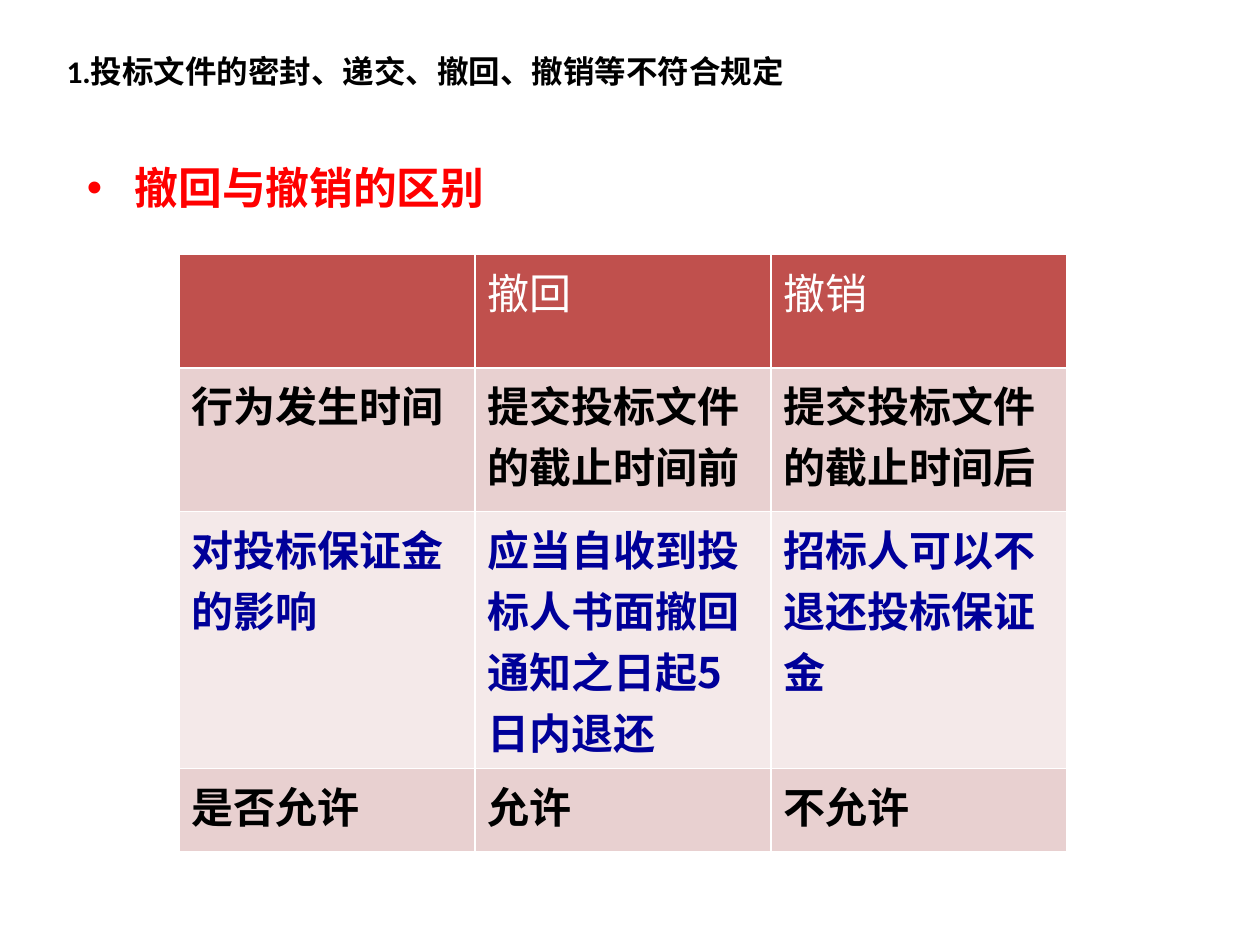
from lxml import etree
from pptx import Presentation
from pptx.dml.color import RGBColor
from pptx.oxml import ns
from pptx.util import Inches, Pt

BLACK = RGBColor(0x00, 0x00, 0x00)
WHITE = RGBColor(0xFF, 0xFF, 0xFF)
RED = RGBColor(0xFF, 0x00, 0x00)
NAVY = RGBColor(0x00, 0x00, 0x99)
BRICK = RGBColor(0xC0, 0x50, 0x4D)
ROSE = RGBColor(0xE8, 0xD0, 0xD0)
BLUSH = RGBColor(0xF4, 0xE9, 0xE9)
CJK_FONT = "Noto Sans CJK SC"

COMPARISON = [
    (0.9, BRICK, WHITE, False, ["", "撤回", "撤销"]),
    (1.14, ROSE, BLACK, True,
     ["行为发生时间", "提交投标文件的截止时间前", "提交投标文件的截止时间后"]),
    (2.04, BLUSH, NAVY, True,
     ["对投标保证金的影响", "应当自收到投标人书面撤回通知之日起5日内退还", "招标人可以不退还投标保证金"]),
    (0.66, ROSE, BLACK, True, ["是否允许", "允许", "不允许"]),
]


def add_run(paragraph, words, size, color, bold=True, latin=CJK_FONT):
    """Append a styled run with Latin and East Asian fonts."""
    run = paragraph.add_run()
    run.text = words
    font = run.font
    font.size, font.bold, font.name = Pt(size), bold, latin
    font.color.rgb = color
    east_asian = etree.SubElement(font._element, ns.qn("a:ea"))
    east_asian.set("typeface", CJK_FONT)


def add_paragraph_box(slide, box):
    """Add a wrapping text box and return its first paragraph."""
    frame = slide.shapes.add_textbox(*map(Inches, box)).text_frame
    frame.word_wrap = True
    return frame.paragraphs[0]


def add_heading(slide, box):
    """Place the section heading."""
    heading = add_paragraph_box(slide, box)
    add_run(heading, "1.投标文件的密封、递交、撤回、撤销等不符合规定", 18, BLACK, latin="Calibri")


def add_topic(slide, box):
    """Place the bulleted topic with a hanging indent."""
    topic = add_paragraph_box(slide, box)
    properties = topic._p.get_or_add_pPr()
    properties.set("marL", str(Inches(0.38)))
    properties.set("indent", str(-Inches(0.38)))
    etree.SubElement(properties, ns.qn("a:buFont")).set("typeface", "Arial")
    etree.SubElement(properties, ns.qn("a:buChar")).set("char", "•")
    add_run(topic, "撤回与撤销的区别", 25, RED)


def set_borders(cell, color, width):
    """Draw the four cell borders ahead of the cell fill."""
    properties = cell._tc.get_or_add_tcPr()
    for position, side in enumerate(("lnL", "lnR", "lnT", "lnB")):
        line = etree.Element(ns.qn(f"a:{side}"), w=str(Pt(width)))
        solid = etree.SubElement(line, ns.qn("a:solidFill"))
        etree.SubElement(solid, ns.qn("a:srgbClr")).set("val", str(color))
        properties.insert(position, line)


def add_comparison(slide, box):
    """Place the table comparing withdrawal and revocation."""
    columns = len(COMPARISON[0][-1])
    table = slide.shapes.add_table(len(COMPARISON), columns, *map(Inches, box)).table
    for column in table.columns:
        column.width = Inches(box[2] / columns)
    for row, (height, fill, color, bold, entries) in zip(table.rows, COMPARISON):
        row.height = Inches(height)
        for cell, entry in zip(row.cells, entries):
            cell.fill.solid()
            cell.fill.fore_color.rgb = fill
            set_borders(cell, WHITE, 1)
            if entry:
                add_run(cell.text_frame.paragraphs[0], entry, 24, color, bold)


def main():
    """Build and save the slide."""
    deck = Presentation()
    deck.slide_width, deck.slide_height = Inches(10), Inches(7.5)
    slide = deck.slides.add_slide(deck.slide_layouts[6])
    add_topic(slide, (0.59, 1.23, 8.49, 5.83))
    add_comparison(slide, (1.42, 2.02, 7.05, 4.74))
    add_heading(slide, (0.43, 0.36, 6.77, 0.31))
    deck.save("out.pptx")


if __name__ == "__main__":
    main()
